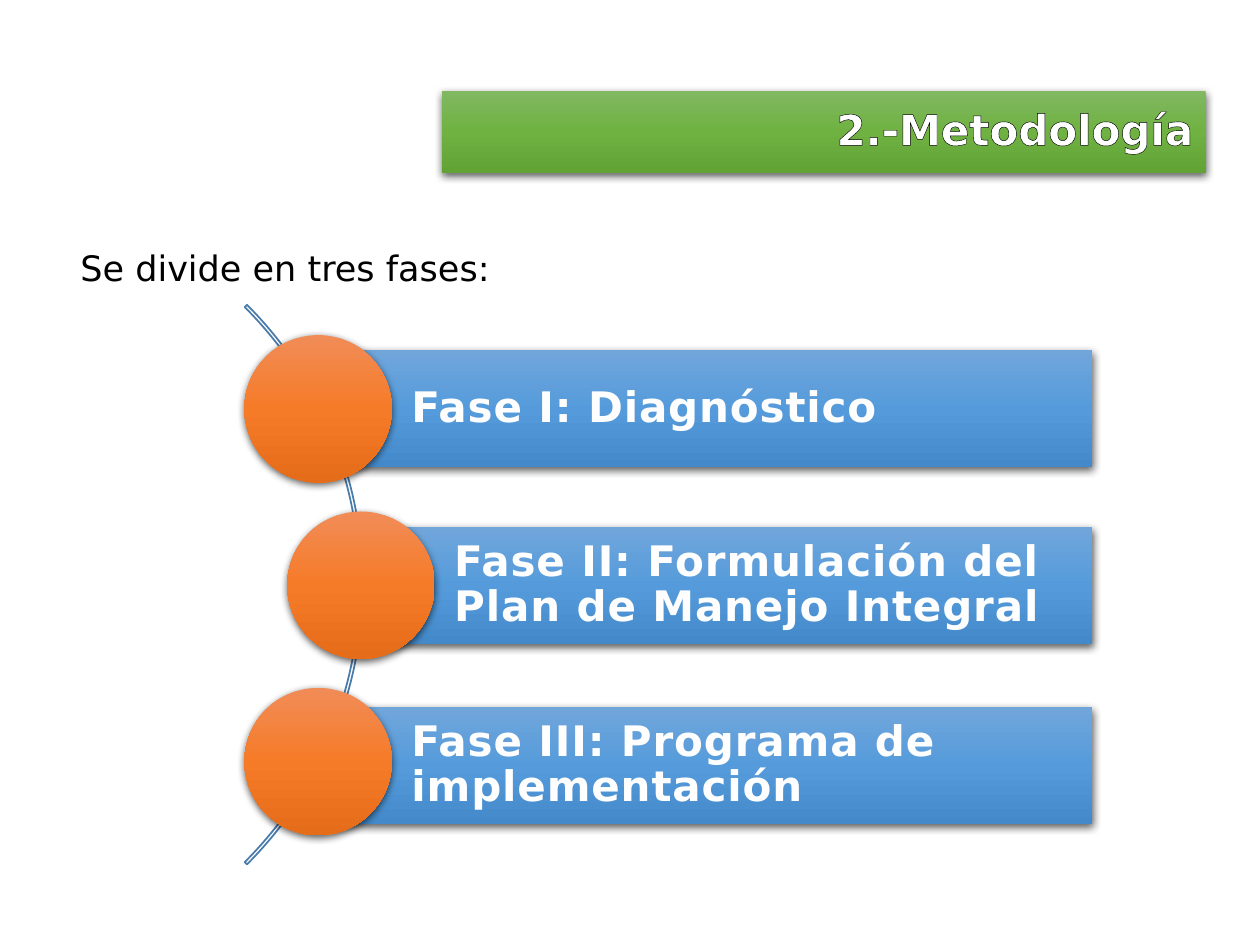
from dataclasses import dataclass

from lxml import etree
from pptx import Presentation
from pptx import util as u
from pptx.dml.color import RGBColor
from pptx.enum import shapes, text
from pptx.oxml import ns


@dataclass(frozen=True)
class Theme:
    font: str = "DejaVu Sans"
    heading_size: int = 24
    body_size: int = 20
    white: str = "FFFFFF"
    label: str = "FEFEFE"
    black: str = "000000"
    arc: str = "497CAB"
    green: tuple = ("81B861", "6FB242", "62A336")
    blue: tuple = ("71A6DB", "559BDB", "448ACA")
    orange: tuple = ("F18C57", "F67B28", "E56C19")


THEME = Theme()

# Phase label, left of circle, top of bar
PHASES = [
    ("Fase I: Diagnóstico", 1.94, 2.78),
    ("Fase II: Formulación del Plan de Manejo Integral", 2.28, 4.18),
    ("Fase III: Programa de implementación", 1.94, 5.61),
]
CIRCLE_TOP, CIRCLE_PITCH, CIRCLE_SIZE = 2.66, 1.4, 1.17
BAR_RIGHT, BAR_HEIGHT = 8.67, 0.93


def add_xml(parent, tag, **attributes):
    element = etree.SubElement(parent, ns.qn(tag))
    for name, value in attributes.items():
        element.set(name, str(value))
    return element


def add_color(parent, color):
    return add_xml(parent, "a:srgbClr", val=color)


def add_shape(slide, kind, left, top, width, height):
    shape = slide.shapes.add_shape(
        kind, u.Inches(left), u.Inches(top), u.Inches(width), u.Inches(height))
    shape.shadow.inherit = False
    return shape


def add_glossy_shape(slide, kind, box, colors):
    """Shape with a vertical three-stop gradient and a soft shadow below."""
    shape = add_shape(slide, kind, *box)
    shape.line.fill.background()
    shape.fill.gradient()
    shape.fill.gradient_angle = 270
    properties = shape.element.spPr
    stops = properties.find(".//" + ns.qn("a:gsLst"))
    for stop in list(stops):
        stops.remove(stop)
    for position, color in zip((0, 50000, 100000), colors):
        add_color(add_xml(stops, "a:gs", pos=position), color)
    shadow = add_xml(properties.find(ns.qn("a:effectLst")), "a:outerShdw",
                     blurRad=u.Pt(4.5), dist=u.Pt(1.5), dir=5400000,
                     algn="ctr", rotWithShape=0)
    add_xml(add_color(shadow, THEME.black), "a:alpha", val=63000)
    return shape


def write_text(shape, content, size, color, bold=False, align=text.PP_ALIGN.LEFT,
               anchor=text.MSO_ANCHOR.MIDDLE, line_spacing=None, insets=None,
               tracking=None, outline=None):
    frame = shape.text_frame
    frame.word_wrap = True
    frame.vertical_anchor = anchor
    if insets:
        (frame.margin_left, frame.margin_top, frame.margin_right,
         frame.margin_bottom) = map(u.Inches, insets)
    paragraph = frame.paragraphs[0]
    paragraph.alignment = align
    paragraph.line_spacing = line_spacing
    run = paragraph.add_run()
    run.text = content
    run.font.name = THEME.font
    run.font.size = u.Pt(size)
    run.font.bold = bold
    run.font.color.rgb = RGBColor.from_string(color)
    run_properties = run.font._element
    if tracking:
        run_properties.set("spc", str(int(tracking * 100)))
    if outline:
        line = etree.Element(ns.qn("a:ln"), w=str(u.Pt(0.8)))
        add_color(add_xml(line, "a:solidFill"), outline)
        run_properties.insert(0, line)


def add_title(slide):
    title = add_glossy_shape(slide, shapes.MSO_SHAPE.RECTANGLE,
                             (3.51, 0.72, 6.06, 0.65), THEME.green)
    write_text(title, "2.-Metodología", THEME.heading_size, THEME.white, bold=True,
               align=text.PP_ALIGN.RIGHT, line_spacing=0.9, outline=THEME.black)


def add_intro(slide):
    intro = slide.shapes.add_textbox(
        u.Inches(0.54), u.Inches(1.91), u.Inches(9.03), u.Inches(0.77))
    write_text(intro, "Se divide en tres fases:", THEME.body_size, THEME.black,
               anchor=text.MSO_ANCHOR.TOP)


def add_arc(slide):
    arc = add_shape(slide, shapes.MSO_SHAPE.BLOCK_ARC, -3.4, 1.5, 6.28, 6.28)
    # Start angle, end angle and band thickness
    for index, value in enumerate((189, 27, 0.004)):
        arc.adjustments[index] = value
    arc.fill.background()
    arc.line.color.rgb = RGBColor.from_string(THEME.arc)
    arc.line.width = u.Pt(1)


def add_phase(slide, index, label, circle_left, bar_top):
    bar_left = circle_left + CIRCLE_SIZE / 2
    bar = add_glossy_shape(
        slide, shapes.MSO_SHAPE.RECTANGLE,
        (bar_left, bar_top, BAR_RIGHT - bar_left, BAR_HEIGHT), THEME.blue)
    write_text(bar, label, THEME.heading_size, THEME.label, bold=True,
               line_spacing=0.9, insets=(0.74, 0.07, 0.07, 0.07), tracking=0.5)
    circle_top = CIRCLE_TOP + index * CIRCLE_PITCH
    add_glossy_shape(slide, shapes.MSO_SHAPE.OVAL,
                     (circle_left, circle_top, CIRCLE_SIZE, CIRCLE_SIZE), THEME.orange)


def main():
    presentation = Presentation()
    presentation.slide_width = u.Inches(10)
    presentation.slide_height = u.Inches(7.5)
    slide = presentation.slides.add_slide(presentation.slide_layouts[6])

    # Heading and introduction
    add_title(slide)
    add_intro(slide)

    # Phases along the arc
    add_arc(slide)
    for index, phase in enumerate(PHASES):
        add_phase(slide, index, *phase)

    presentation.save("out.pptx")


if __name__ == "__main__":
    main()
